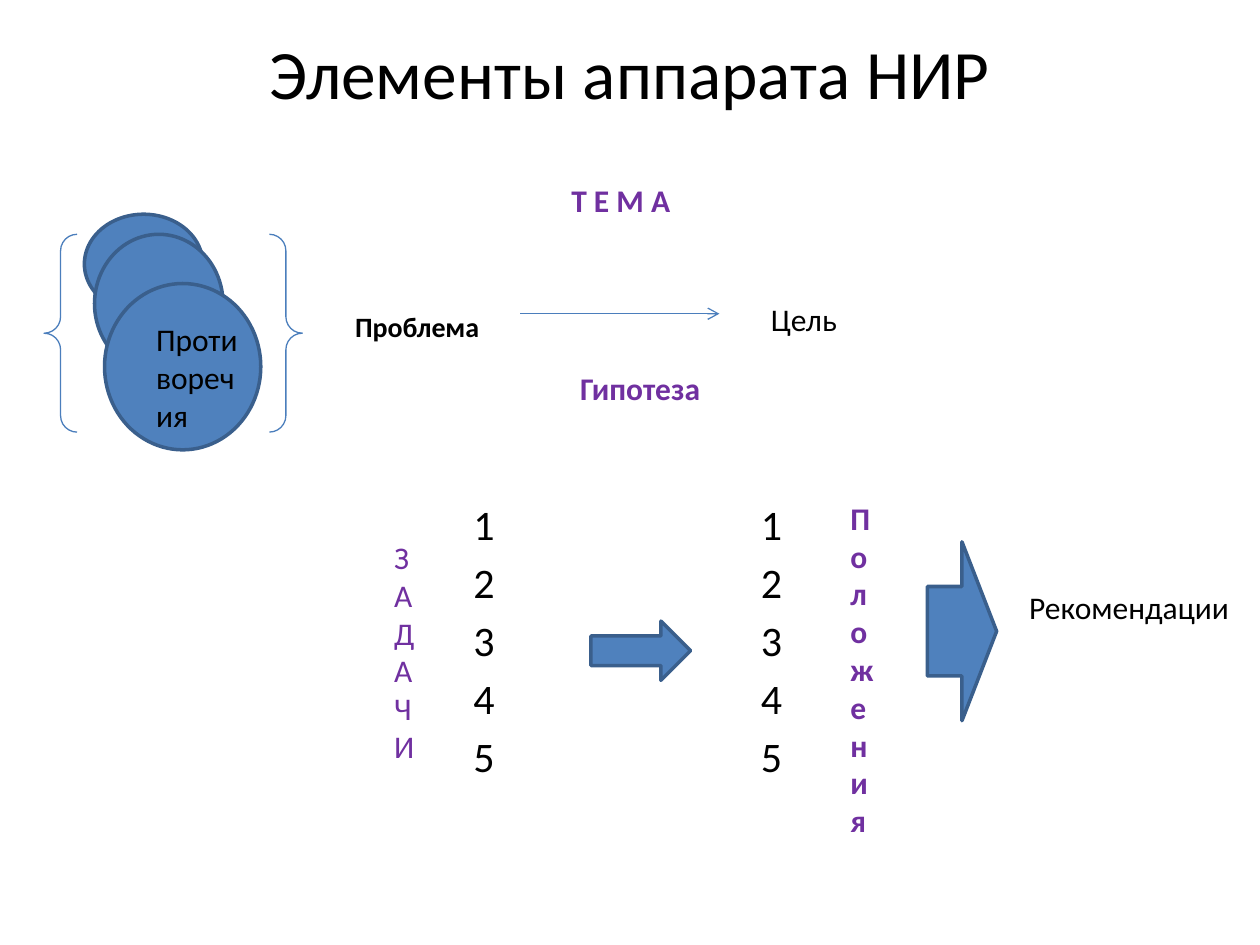
from typing import NamedTuple

from lxml import etree
from pptx import Presentation
from pptx.dml.color import RGBColor
from pptx.enum import shapes, text
from pptx.oxml import ns
from pptx.util import Inches, Pt

BLACK = RGBColor(0x00, 0x00, 0x00)
VIOLET = RGBColor(0x70, 0x30, 0xA0)
BLUE = RGBColor(0x4F, 0x81, 0xBD)
NAVY = RGBColor(0x3A, 0x5F, 0x8C)
THIN = RGBColor(0x4B, 0x7E, 0xBC)
KIND = shapes.MSO_SHAPE


class Box(NamedTuple):
    left: float
    top: float
    width: float
    height: float


class Label(NamedTuple):
    words: str
    box: Box
    style: dict


OVALS = [
    Box(0.67, 1.7, 0.94, 0.79),
    Box(0.75, 1.86, 1.02, 1.1),
    Box(0.83, 2.25, 1.24, 1.32),
]
ARROWS = [Box(4.69, 4.93, 0.79, 0.47), Box(7.36, 4.3, 0.55, 1.42)]
BRACES = Box(0.35, 1.86, 2.05, 1.57)

THEME = dict(color=VIOLET, bold=True, align=text.PP_ALIGN.CENTER)
LIST = dict(size=24, before=4.3, indent=0.38)
TITLE = dict(size=39.6, align=text.PP_ALIGN.CENTER,
             anchor=text.MSO_ANCHOR.MIDDLE)
DIGITS = "1\n2\n3\n4\n5"

LABELS = [
    Label("Элементы аппарата НИР", Box(0.5, 0.3, 9, 0.54), TITLE),
    Label("Проблема", Box(2.72, 2.41, 2.13, 0.37), dict(size=16, bold=True)),
    Label("Цель", Box(6.02, 2.33, 1.89, 0.4), {}),
    Label("Т Е М А ", Box(4.13, 1.39, 1.65, 0.4), THEME),
    Label("Гипотеза", Box(4.37, 2.88, 1.42, 0.4), THEME),
    Label(DIGITS, Box(3.66, 3.91, 0.87, 3.1), LIST),
    Label(DIGITS, Box(5.94, 3.91, 0.87, 3.1), LIST),
    Label("Противоречия", Box(1.14, 2.49, 0.87, 1.01), {}),
    Label("З А Д А Ч И", Box(3.03, 4.22, 0.39, 1.92), dict(color=VIOLET)),
    Label("Положения", Box(6.65, 3.91, 0.39, 2.83),
          dict(color=VIOLET, bold=True)),
    Label("Рекомендации", Box(8.07, 4.62, 1.93, 0.4), {}),
]


def add_text(slide, words: str, box: Box, *, size: float = 18,
             color: RGBColor = BLACK, bold: bool = False,
             align=text.PP_ALIGN.LEFT, anchor=text.MSO_ANCHOR.TOP,
             before: float = 0, indent: float = 0) -> None:
    """Add a wrapped text box with one paragraph per line of words."""
    frame = slide.shapes.add_textbox(*map(Inches, box)).text_frame
    frame.word_wrap = True
    frame.vertical_anchor = anchor
    frame.text = words
    for para in frame.paragraphs:
        para.alignment = align
        para.space_before = Pt(before)
        if indent:
            props = para._p.get_or_add_pPr()
            props.set("marL", str(Inches(indent)))
            props.set("indent", str(-Inches(indent)))
        font = para.runs[0].font
        font.name = "Calibri"
        font.size = Pt(size)
        font.bold = bold
        font.color.rgb = color


def add_form(slide, kind, box: Box, fill: RGBColor | None = BLUE,
             color: RGBColor = NAVY, width: float = 2) -> None:
    form = slide.shapes.add_shape(kind, *map(Inches, box))
    form.shadow.inherit = False
    if fill is None:
        form.fill.background()
    else:
        form.fill.solid()
        form.fill.fore_color.rgb = fill
    form.line.color.rgb = color
    form.line.width = Pt(width)


def add_link(slide, left: float, right: float, top: float) -> None:
    """Add a thin level line with an open arrowhead on its right end."""
    link = slide.shapes.add_connector(
        shapes.MSO_CONNECTOR.STRAIGHT,
        Inches(left), Inches(top), Inches(right), Inches(top))
    link.line.color.rgb = THIN
    link.line.width = Pt(0.75)
    etree.SubElement(link.line._get_or_add_ln(), ns.qn("a:tailEnd"),
                     type="arrow")
    etree.SubElement(link._element.spPr, ns.qn("a:effectLst"))


def main() -> None:
    deck = Presentation()
    deck.slide_width, deck.slide_height = Inches(10), Inches(7.5)
    slide = deck.slides.add_slide(deck.slide_layouts[6])
    for box in OVALS:
        add_form(slide, KIND.OVAL, box)
    add_form(slide, KIND.DOUBLE_BRACE, BRACES, None, THIN, 0.75)
    for box in ARROWS:
        add_form(slide, KIND.RIGHT_ARROW, box)
    for label in LABELS:
        add_text(slide, label.words, label.box, **label.style)
    add_link(slide, 4.13, 5.71, 2.49)
    deck.save("out.pptx")


if __name__ == "__main__":
    main()
